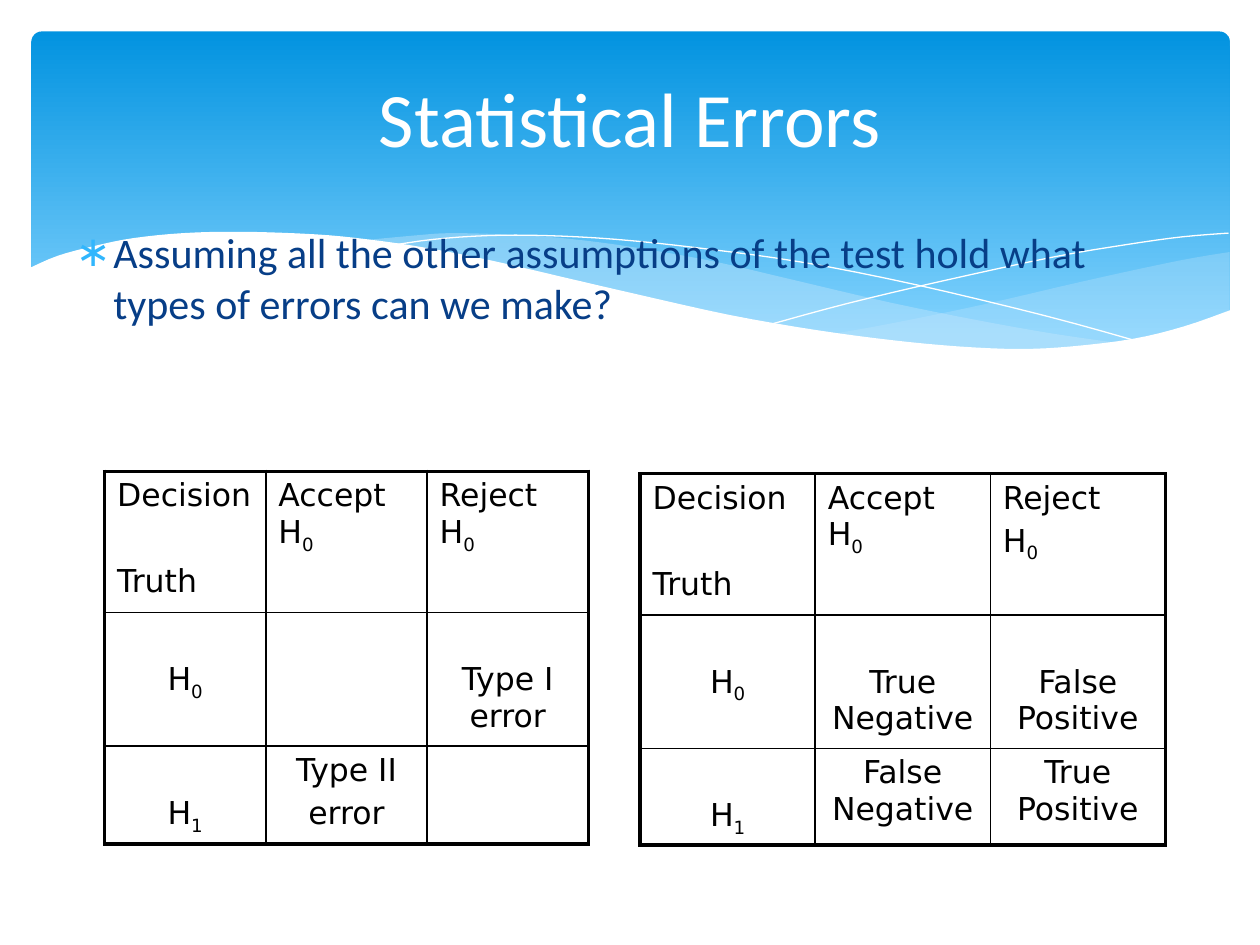
"""Build the Statistical Errors slide: wave banner, question and two decision tables."""
import lxml.etree
import pptx
import pptx.dml.color
import pptx.enum.shapes
import pptx.enum.text
import pptx.oxml.ns
import pptx.util

THEME = {
    "sky": "0293E0", "pale": "83D3FE", "mist": "C6E7FC", "white": "FFFFFF",
    "navy": "073E87", "bullet": "31B6FD", "ink": "000000",
    "head_font": "Calibri", "table_font": "DejaVu Sans",
    "title": 44, "body": 24, "cell": 18, "outer": 2.25, "inner": 1,
}
Pt = pptx.util.Pt
qn = pptx.oxml.ns.qn

prs = pptx.Presentation()
prs.slide_width, prs.slide_height = pptx.util.Inches(10), pptx.util.Inches(7.5)
COL, ROW = prs.slide_width / 10, prs.slide_height / 7.5
s = prs.slides.add_slide(prs.slide_layouts[1])


def add_run(p, text, font, size, color):
    r = p.add_run()
    r.text = text
    r.font.name, r.font.size = font, Pt(size)
    r.font.color.rgb = pptx.dml.color.RGBColor.from_string(THEME[color])
    return r


def add_wave(edges, fill=None, alpha=100):
    pts = []
    for edge in edges:
        padded = [edge[0], *edge, edge[-1]]
        for a, b, c, d in zip(padded, padded[1:], padded[2:], padded[3:]):
            for t in (0, 0.25, 0.5, 0.75):
                pts.append(tuple(
                    (2 * q + (r - o) * t + (2 * o - 5 * q + 4 * r - u) * t ** 2
                     + (3 * q - o - 3 * r + u) * t ** 3) / 2
                    for o, q, r, u in zip(a, b, c, d)))
        pts.append(edge[-1])
    emu = [(round(x * COL), round(y * ROW)) for x, y in pts]
    fb = s.shapes.build_freeform(*emu[0])
    fb.add_line_segments(emu[1:], close=fill is not None)
    sp = fb.convert_to_shape()
    sp.shadow.inherit = False
    if fill:
        sp.fill.solid()
        sp.fill.fore_color.rgb = pptx.dml.color.RGBColor.from_string(THEME[fill])
        clr = sp._element.spPr.find(".//" + qn("a:srgbClr"))
        lxml.etree.SubElement(clr, qn("a:alpha"), val=str(alpha * 1000))
        sp.line.fill.background()
    else:
        sp.fill.background()
        sp.line.color.rgb = pptx.dml.color.RGBColor.from_string(THEME["white"])
        sp.line.width = Pt(0)


banner = s.shapes.add_shape(
    pptx.enum.shapes.MSO_SHAPE.ROUNDED_RECTANGLE,
    round(0.25 * COL), round(0.25 * ROW), round(9.51 * COL), round(2.7 * ROW))
banner.adjustments[0] = 0.03
banner.shadow.inherit = False
banner.line.fill.background()
banner.fill.gradient()
banner.fill.gradient_angle = 270
for stop, color, pos in zip(banner.fill.gradient_stops, ("sky", "pale"), (0, 0.9)):
    stop.color.rgb = pptx.dml.color.RGBColor.from_string(THEME[color])
    stop.position = pos

add_wave([
    [(9.76, 2), (9.35, 2.07), (8.61, 2.23), (7.79, 2.42), (7.06, 2.57), (6.61, 2.65)],
    [(6.61, 2.65), (7.05, 2.71), (7.57, 2.76), (8.14, 2.78), (8.63, 2.75),
     (9.05, 2.69), (9.42, 2.59), (9.76, 2.47)],
], "mist", 29)
add_wave([
    [(8.93, 2.73), (8.37, 2.65), (7.75, 2.54), (7.06, 2.4), (6.29, 2.22), (5.69, 2.08),
     (5.14, 1.98), (4.65, 1.91), (4.2, 1.87), (3.61, 1.85), (3.28, 1.87), (2.86, 1.91)],
    [(2.86, 1.91), (3.42, 1.99), (4.04, 2.11), (4.91, 2.32), (5.66, 2.48), (6.34, 2.61),
     (6.95, 2.7), (7.48, 2.76), (8.07, 2.78), (8.57, 2.77), (8.93, 2.73)],
], "mist", 40)
add_wave([[
    (3.09, 1.95), (3.44, 1.9), (3.87, 1.87), (4.33, 1.87), (4.89, 1.9), (5.56, 1.97),
    (6.36, 2.08), (7.27, 2.26), (8.31, 2.51), (9.07, 2.72)]])
add_wave([[
    (6.13, 2.57), (6.72, 2.41), (7.48, 2.23), (8.36, 2.04), (8.95, 1.94), (9.38, 1.88),
    (9.75, 1.85)]])
add_wave([
    [(9.77, 2.46), (9.4, 2.59), (8.99, 2.69), (8.5, 2.75), (8.09, 2.77), (7.61, 2.75),
     (7.08, 2.7), (6.48, 2.62), (5.79, 2.5), (5.03, 2.33), (4.47, 2.2), (3.91, 2.07),
     (3.4, 1.97), (2.92, 1.9), (2.5, 1.86), (1.93, 1.84), (1.46, 1.85), (1.06, 1.89),
     (0.76, 1.95), (0.46, 2.03), (0.23, 2.13)],
    [(0.23, 3.29), (9.77, 3.29)],
], "white")

title, body = s.placeholders
for sp, (left, top, width, height) in (
        (title, (0.5, 0.3, 9, 1.25)), (body, (0.5, 1.75, 8.75, 1.17))):
    sp.left, sp.top = round(left * COL), round(top * ROW)
    sp.width, sp.height = round(width * COL), round(height * ROW)
    sp.text_frame.auto_size = pptx.enum.text.MSO_AUTO_SIZE.NONE
    s.shapes._spTree.append(sp._element)

tf = title.text_frame
tf.vertical_anchor = pptx.enum.text.MSO_ANCHOR.MIDDLE
p = tf.paragraphs[0]
p.alignment = pptx.enum.text.PP_ALIGN.CENTER
add_run(p, "Statistical Errors", THEME["head_font"], THEME["title"], "white")

p = body.text_frame.paragraphs[0]
add_run(p, "Assuming all the other assumptions of the test hold what types of errors can we make?",
        THEME["head_font"], THEME["body"], "navy")
pPr = p._p.get_or_add_pPr()
pPr.set("marL", str(round(0.3 * COL)))
pPr.set("indent", str(round(-0.3 * COL)))
bu = lxml.etree.SubElement(pPr, qn("a:buClr"))
lxml.etree.SubElement(bu, qn("a:srgbClr"), val=THEME["bullet"])
lxml.etree.SubElement(pPr, qn("a:buFont"), typeface=THEME["head_font"])
lxml.etree.SubElement(pPr, qn("a:buChar"), char="∗")

corner = ["Decision", "Truth"]
tables = [
    ((5.08, 3.76), 1.39, (1.12, 1.06, 0.76), [
        [corner, ["Accept H_0"], ["Reject", "H_0"]],
        [["H_0"], ["True Negative"], ["False Positive"]],
        [["H_1"], ["False Negative"], ["True Positive"]]]),
    ((0.83, 3.74), 1.28, (1.12, 1.06, 0.78), [
        [corner, ["Accept H_0"], ["Reject H_0"]],
        [["H_0"], [], ["Type I error"]],
        [["H_1"], ["Type II", "error"], []]]),
]
for (left, top), col_width, heights, rows in tables:
    table = s.shapes.add_table(
        3, 3, round(left * COL), round(top * ROW),
        round(3 * col_width * COL), round(sum(heights) * ROW)).table
    table.first_row = table.horz_banding = False
    for i, height in enumerate(heights):
        table.columns[i].width = round(col_width * COL)
        table.rows[i].height = round(height * ROW)
    for i, row in enumerate(rows):
        for j, lines in enumerate(row):
            cell = table.cell(i, j)
            cell.fill.background()
            lowered = i == 1 or (i == 2 and j == 0)
            cell.margin_top = round((0.39 if lowered else 0.05) * ROW)
            for k, line in enumerate(lines):
                tf = cell.text_frame
                p = tf.add_paragraph() if k else tf.paragraphs[0]
                p.space_before = Pt(28.2 if line == "Truth" else 3.6 if k else 0)
                if i:
                    p.alignment = pptx.enum.text.PP_ALIGN.CENTER
                for n, text in enumerate(line.split("_")):
                    r = add_run(p, text, THEME["table_font"], THEME["cell"], "ink")
                    if n:
                        r.font._element.set("baseline", "-25000")
            tcPr = cell._tc.get_or_add_tcPr()
            sides = (("L", j == 0), ("R", j == 2), ("T", i == 0), ("B", i == 2))
            for n, (side, edge) in enumerate(sides):
                width = Pt(THEME["outer" if edge else "inner"])
                ln = lxml.etree.Element(qn("a:ln" + side), w=str(width))
                solid = lxml.etree.SubElement(ln, qn("a:solidFill"))
                lxml.etree.SubElement(solid, qn("a:srgbClr"), val=THEME["ink"])
                tcPr.insert(n, ln)

prs.save("out.pptx")
